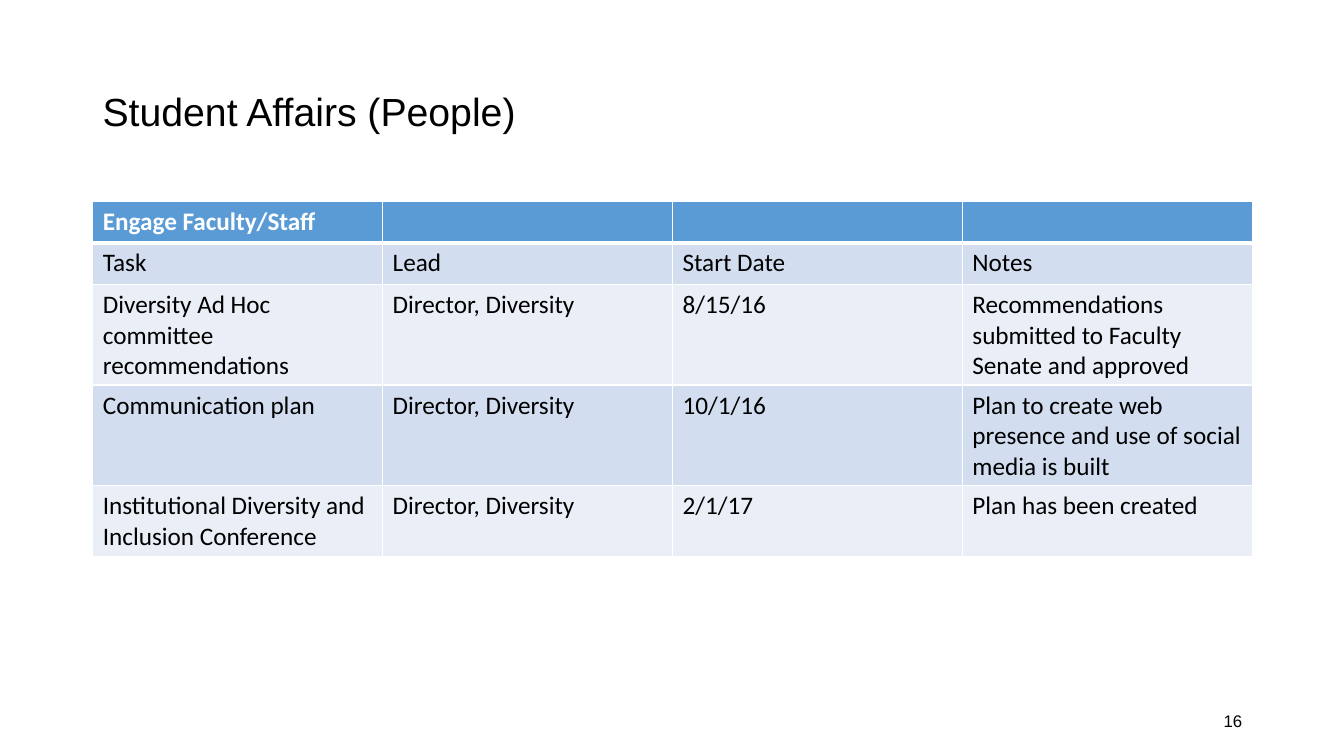
from lxml import etree
from pptx import Presentation
from pptx import util as u
from pptx.dml.color import RGBColor
from pptx.enum import text
from pptx.oxml import ns

BLACK = RGBColor(0x00, 0x00, 0x00)
WHITE = RGBColor(0xFF, 0xFF, 0xFF)
HEADER_BLUE = RGBColor(0x5B, 0x9B, 0xD5)
BANDS = (RGBColor(0xD2, 0xDE, 0xEF), RGBColor(0xEA, 0xEF, 0xF7))

ROW_HEIGHTS = (0.41, 0.41, 1, 1, 0.7)
ROWS = (
    ("Engage Faculty/Staff", "", "", ""),
    ("Task", "Lead", "Start Date", "Notes"),
    ("Diversity Ad Hoc committee recommendations", "Director, Diversity",
     "8/15/16", "Recommendations submitted to Faculty Senate and approved"),
    ("Communication plan", "Director, Diversity", "10/1/16",
     "Plan to create web presence and use of social media is built"),
    ("Institutional Diversity and Inclusion Conference",
     "Director, Diversity", "2/1/17", "Plan has been created"),
)


class PlanSlide:
    """Holds the text styles and the slide being built."""

    title = {"name": "Arial", "size": u.Pt(28)}
    number = {"name": "Arial", "size": u.Pt(12)}
    body = {"name": "Calibri", "size": u.Pt(18), "bold": False}
    header = {"name": "Calibri", "size": u.Pt(18), "bold": True}

    def __init__(self, deck):
        self.slide = deck.slides.add_slide(deck.slide_layouts[6])

    def add_span(self, para, words, style, color):
        span = para.add_run()
        span.text = words
        for key, value in style.items():
            setattr(span.font, key, value)
        span.font.color.rgb = color

    def text_box(self, words, place, style, **para_format):
        box = self.slide.shapes.add_textbox(*map(u.Inches, place))
        frame = box.text_frame
        frame.word_wrap = True
        frame.vertical_anchor = text.MSO_ANCHOR.MIDDLE
        para = frame.paragraphs[0]
        for key, value in para_format.items():
            setattr(para, key, value)
        self.add_span(para, words, style, BLACK)

    def border(self, cell, side, points):
        properties = cell._tc.get_or_add_tcPr()
        line = etree.SubElement(properties, ns.qn(f"a:ln{side}"), w=str(u.Pt(points)))
        fill = etree.SubElement(line, ns.qn("a:solidFill"))
        etree.SubElement(fill, ns.qn("a:srgbClr"), val=str(WHITE))

    def table(self, rows, heights, place):
        frame = self.slide.shapes.add_table(
            len(rows), len(rows[0]), *map(u.Inches, place))
        grid = frame.table
        for row, height in zip(grid.rows, heights):
            row.height = u.Inches(height)
        for r, row in enumerate(rows):
            for c, words in enumerate(row):
                cell = grid.cell(r, c)
                # Thick rule between the header and the first row
                thick = {0: "B", 1: "T"}.get(r)
                for side in "LRTB":
                    self.border(cell, side, 3 if side == thick else 1)
                cell.fill.solid()
                cell.fill.fore_color.rgb = BANDS[(r - 1) % 2] if r else HEADER_BLUE
                if words:
                    style, color = (self.body, BLACK) if r else (self.header, WHITE)
                    self.add_span(cell.text_frame.paragraphs[0], words, style, color)


def main():
    deck = Presentation()
    deck.slide_width, deck.slide_height = u.Inches(13.33), u.Inches(7.5)
    page = PlanSlide(deck)

    # Title
    page.text_box("Student Affairs (People)", (0.92, 0.4, 11.5, 1.45),
                  page.title, line_spacing=0.9)

    # Task table
    page.table(ROWS, ROW_HEIGHTS, (0.92, 2, 11.5, sum(ROW_HEIGHTS)))

    # Slide number
    page.text_box("16", (9.42, 6.95, 3, 0.4), page.number,
                  alignment=text.PP_ALIGN.RIGHT)

    deck.save("out.pptx")


if __name__ == "__main__":
    main()
